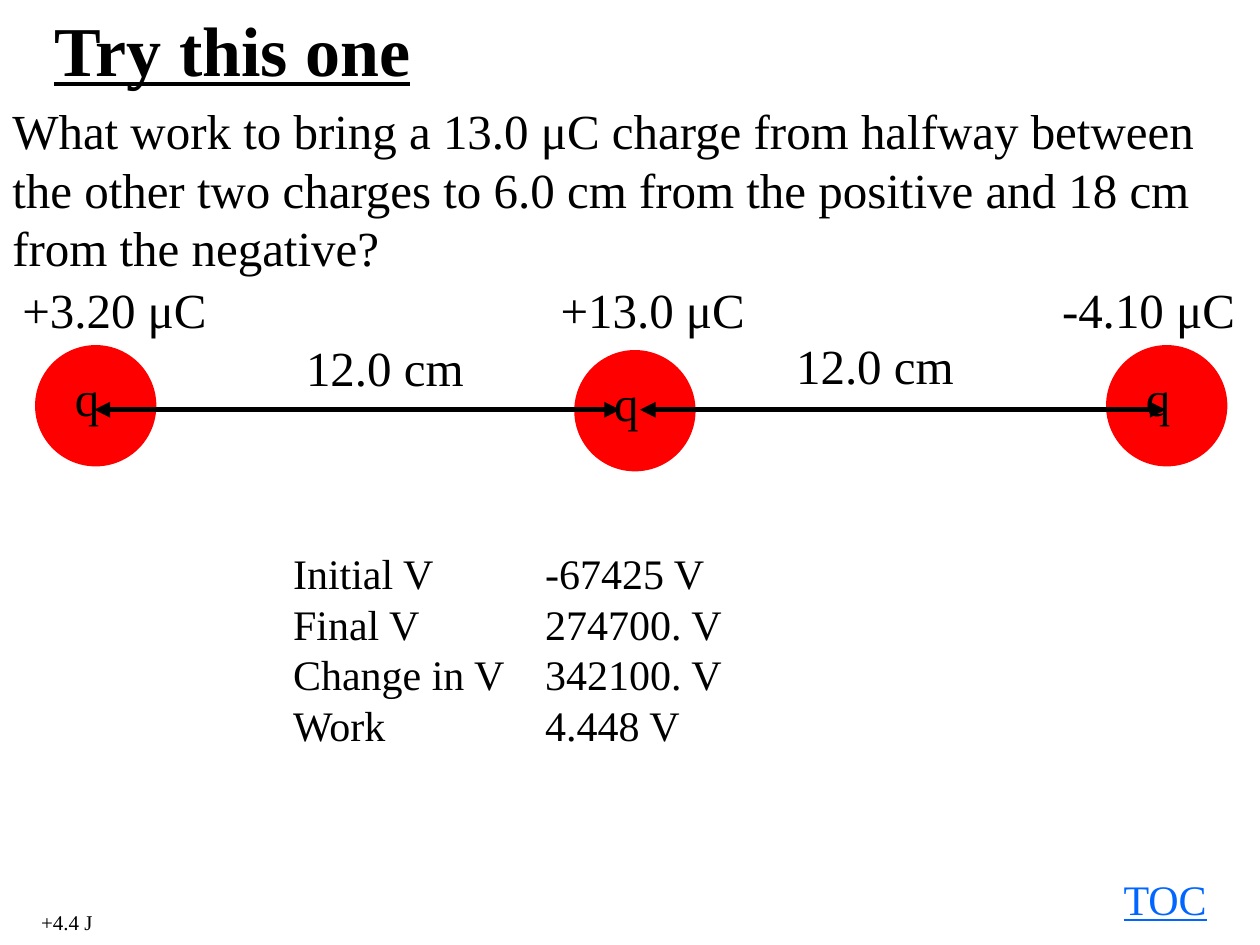
from lxml import etree
from pptx import Presentation
from pptx.dml.color import RGBColor
from pptx.enum.shapes import MSO_CONNECTOR, MSO_SHAPE
from pptx.enum.text import MSO_ANCHOR, MSO_AUTO_SIZE, PP_ALIGN
from pptx.oxml.ns import qn
from pptx.util import Cm, Pt

LINE, OVAL = MSO_CONNECTOR.STRAIGHT, MSO_SHAPE.OVAL
TOP, LEFT, FIXED = MSO_ANCHOR.TOP, PP_ALIGN.LEFT, MSO_AUTO_SIZE.NONE
BLACK = RGBColor(0x00, 0x00, 0x00)
RED = RGBColor(0xFF, 0x00, 0x00)
BLUE = RGBColor(0x00, 0x66, 0xFF)
FACE = "Times New Roman"

# Lengths in cm, text sizes in points
TITLE = ("Try this one", (0.84, 0, 23.06, 1.96))
QUERY = (
    "What work to bring a 13.0 μC charge from halfway between the other two "
    "charges to 6.0 cm from the positive and 18 cm from the negative?",
    (0, 1.9, 24.56, 3.81),
)
TOC = ("TOC", (22.4, 17.48, 2.21, 1.27))
REPLY = ("+4.4 J", (0.58, 18.21, 1.55, 0.76))
STEPS = [
    ("Initial V", "-67425 V"),
    ("Final V", "274700. V"),
    ("Change in V", "342100. V"),
    ("Work", "4.448 V"),
]
STEP_BOX, STEP_TAB = (5.66, 10.92, 9.17, 4.32), 5.08

# label, label left, label width, circle left, circle top
CHARGES = [
    ("+3.20 μC", 0.2, 4.27, 0.76, 7.01),
    ("+13.0 μC", 11.05, 4.27, 11.63, 7.11),
    ("-4.10 μC", 21.16, 4.04, 22.35, 7.01),
]
# label, label left, label top, arrow start
GAPS = [("12.0 cm", 5.92, 6.68, 1.9), ("12.0 cm", 15.8, 6.65, 12.9)]
LABEL_TOP, ROW, DISC = 5.51, 1.45, 2.34
ARROW_TOP, ARROW_LEN = 8.26, 10.6


def style(frame, lines, size=28, wrap=False, tab=None, **extra):
    """Write the lines into the frame, top left, in one format."""
    frame.word_wrap, frame.auto_size = wrap, FIXED
    frame.vertical_anchor = TOP
    look = {"name": FACE, "size": Pt(size), **extra}
    color = look.pop("color", BLACK)
    frame.text = "\n".join(lines)
    for para in frame.paragraphs:
        para.alignment = LEFT
        para.line_spacing = Pt(1.2 * size)
        if tab:
            stops = etree.SubElement(para._p.get_or_add_pPr(), qn("a:tabLst"))
            etree.SubElement(stops, qn("a:tab"), pos=str(Cm(tab)), algn="l")
        for key, value in look.items():
            setattr(para.runs[0].font, key, value)
        para.runs[0].font.color.rgb = color


def write(shapes, text, box, **look):
    frame = shapes.add_textbox(*map(Cm, box)).text_frame
    style(frame, [text] if isinstance(text, str) else text, **look)


def draw_charge(shapes, left, top):
    group = shapes.add_group_shape().shapes
    disc = group.add_shape(OVAL, *map(Cm, (left, top, DISC, DISC)))
    disc.shadow.inherit = False
    disc.fill.solid()
    disc.fill.fore_color.rgb = RED
    disc.line.color.rgb = RED
    disc.line.width = Pt(3)
    write(group, "q", (left + 0.5, top + 0.28, 1.02, ROW))


def draw_arrow(shapes, left):
    ends = (left, ARROW_TOP, left + ARROW_LEN, ARROW_TOP)
    arrow = shapes.add_connector(LINE, *map(Cm, ends))
    arrow.line.color.rgb = BLACK
    arrow.line.width = Pt(3)
    for tip in ("a:headEnd", "a:tailEnd"):
        etree.SubElement(arrow.line._get_or_add_ln(), qn(tip), type="triangle")
    etree.SubElement(arrow._element.spPr, qn("a:effectLst"))


def main():
    deck = Presentation()
    deck.slide_width, deck.slide_height = Cm(25.4), Cm(19.05)
    slide = deck.slides.add_slide(deck.slide_layouts[5])
    shapes = slide.shapes

    title = shapes.title
    text, box = TITLE
    for key, value in zip(("left", "top", "width", "height"), box):
        setattr(title, key, Cm(value))
    style(title.text_frame, [text], size=40, wrap=True, bold=True, underline=True)

    write(shapes, *TOC, size=24, color=BLUE, underline=True)
    write(shapes, *QUERY, wrap=True)
    for label, left, width, x, y in CHARGES:
        draw_charge(shapes, x, y)
        write(shapes, label, (left, LABEL_TOP, width, ROW))
    for label, left, top, start in GAPS:
        draw_arrow(shapes, start)
        write(shapes, label, (left, top, 3.68, ROW))
    write(shapes, ["\t".join(step) for step in STEPS], STEP_BOX, size=24, tab=STEP_TAB)
    write(shapes, *REPLY, size=12)

    deck.save("out.pptx")


if __name__ == "__main__":
    main()
